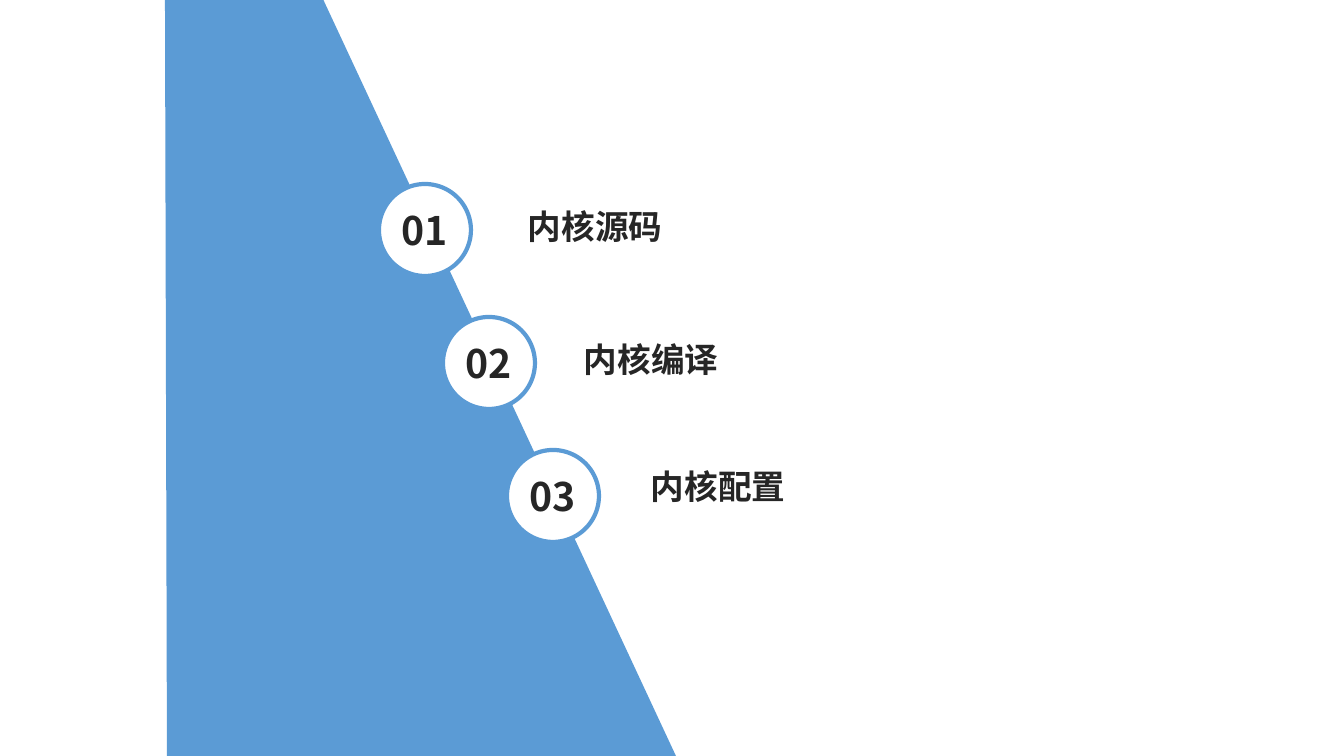
from lxml import etree
from pptx import Presentation
from pptx.dml.color import RGBColor
from pptx.enum import shapes, text
from pptx.oxml.ns import qn
from pptx.util import Pt

# Content: number, topic, left and top of the topic, width of the topic
CHAPTERS = [
    ("01", "内核源码", 518, 201, 608),
    ("02", "内核编译", 574, 334, 551),
    ("03", "内核配置", 641, 461, 551),
]
BLUE, WHITE, INK = "5B9BD5", "FFFFFF", "262626"
FONT = "Noto Sans CJK SC"

# Layout in px
PX = 9071.43  # EMU per px
SLIDE_W, SLIDE_H = 1344, 756
BAND = [(676, 756), (323, -1), (165, -1), (167, 760)]
BADGE_X, BADGE_Y, BADGE = 379, 184, 92
STEP_X, STEP_Y = 64, 133
NUMBER_DX, NUMBER_DY, NUMBER_W, NUMBER_H = 9, 17, 74, 60
TOPIC_H = 50


def emu(*lengths):
    return [round(length * PX) for length in lengths]


def paint(fill, color):
    fill.solid()
    fill.fore_color.rgb = RGBColor.from_string(color)


def add_text(parent, words, box, size, align):
    frame = parent.add_textbox(*emu(*box)).text_frame
    frame.word_wrap = True
    paragraph = frame.paragraphs[0]
    paragraph.text = words
    paragraph.alignment = align
    font = paragraph.font
    font.name, font.size, font.bold = FONT, Pt(size), True
    paint(font.fill, INK)
    # East Asian typeface, next to the Latin one
    defaults = paragraph._p.find(qn("a:pPr")).find(qn("a:defRPr"))
    etree.SubElement(defaults, qn("a:ea"), typeface=FONT)


deck = Presentation()
deck.slide_width, deck.slide_height = emu(SLIDE_W, SLIDE_H)
slide = deck.slides.add_slide(deck.slide_layouts[6])

# Slanted band
outline = slide.shapes.build_freeform(*BAND[0], scale=PX)
outline.add_line_segments(BAND[1:], close=True)
band = outline.convert_to_shape()
band.shadow.inherit = False
paint(band.fill, BLUE)
band.line.fill.background()

# Numbered badges down the slope, each with its topic
for i, (number, topic, topic_x, topic_y, topic_w) in enumerate(CHAPTERS):
    x, y = BADGE_X + i * STEP_X, BADGE_Y + i * STEP_Y
    badge = slide.shapes.add_group_shape().shapes
    circle = badge.add_shape(shapes.MSO_SHAPE.OVAL, *emu(x, y, BADGE, BADGE))
    circle.shadow.inherit = False
    paint(circle.fill, WHITE)
    paint(circle.line.fill, BLUE)
    circle.line.width = Pt(3)
    add_text(badge, number, (x + NUMBER_DX, y + NUMBER_DY, NUMBER_W, NUMBER_H),
             28, text.PP_ALIGN.CENTER)
    add_text(slide.shapes, topic, (topic_x, topic_y, topic_w, TOPIC_H),
             24, text.PP_ALIGN.LEFT)

deck.save("out.pptx")
